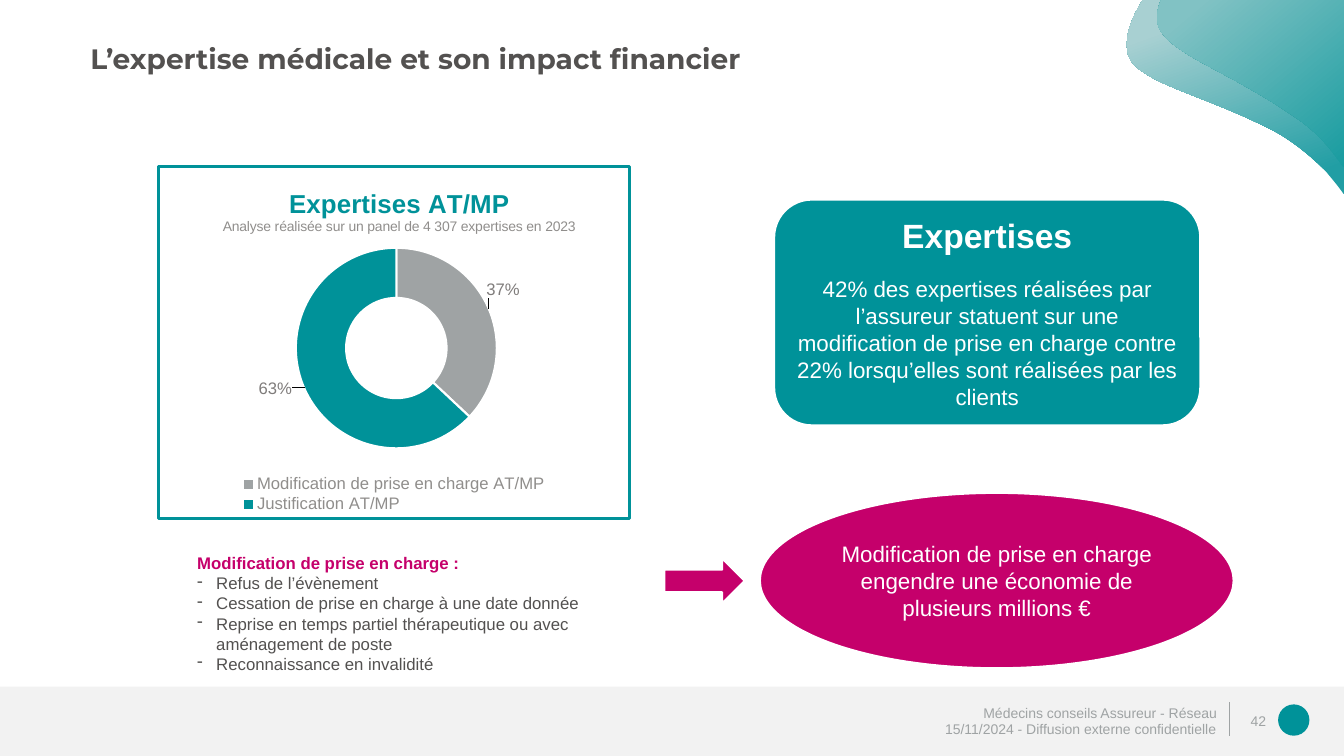
from lxml import etree
from pptx import Presentation
from pptx.chart.data import CategoryChartData
from pptx.dml.color import RGBColor
from pptx.enum.chart import XL_CHART_TYPE, XL_LEGEND_POSITION
from pptx.enum.shapes import MSO_CONNECTOR, MSO_SHAPE
from pptx.enum.text import MSO_ANCHOR, PP_ALIGN
from pptx.oxml import parse_xml
from pptx.oxml.ns import nsdecls, qn
from pptx.util import Cm, Pt

LEFT, CENTER, RIGHT = PP_ALIGN.LEFT, PP_ALIGN.CENTER, PP_ALIGN.RIGHT
TOP, MIDDLE, BOTTOM = MSO_ANCHOR.TOP, MSO_ANCHOR.MIDDLE, MSO_ANCHOR.BOTTOM
TEAL, PINK, GREY, DARK, WHITE = "009299", "C5006B", "9FA3A4", "535150", "FFFFFF"
color = RGBColor.from_string


def write(frame, text, size=12, fill=DARK, bold=False, align=LEFT,
          font="Arial", bullet=False, after=0, spacing=None):
    para = frame.paragraphs[0]
    if para.runs:
        para = frame.add_paragraph()
    if bullet:
        properties = para._p.get_or_add_pPr()
        properties.set("marL", str(Cm(0.48)))
        properties.set("indent", str(-Cm(0.48)))
        etree.SubElement(properties, qn("a:buChar")).set("char", "-")
    para.alignment = align
    para.space_after = Pt(after)
    if spacing:
        para.line_spacing = spacing
    span = para.add_run()
    span.text = text
    span.font.name = font
    span.font.size = Pt(size)
    span.font.bold = bold
    span.font.color.rgb = color(fill)


def place(parent, previous, **numbers):
    for old in parent.findall(qn("c:layout")):
        parent.remove(old)
    layout = etree.Element(qn("c:layout"))
    manual = etree.SubElement(layout, qn("c:manualLayout"))
    if previous is None:
        etree.SubElement(manual, qn("c:layoutTarget")).set("val", "inner")
    if parent.tag != qn("c:dLbl"):
        for mode in ("xMode", "yMode"):
            etree.SubElement(manual, qn(f"c:{mode}")).set("val", "edge")
    for name, number in numbers.items():
        etree.SubElement(manual, qn(f"c:{name}")).set("val", str(number))
    if previous is None:
        parent.insert(0, layout)
    else:
        parent.find(qn(previous)).addnext(layout)


deck = Presentation()
deck.slide_width, deck.slide_height = Cm(33.87), Cm(19.05)
page = deck.slides.add_slide(deck.slide_layouts[6])

waves = [
    ((28.8, 0), [((28.32, 0.76), (28.3, 1.35), (28.58, 1.63)),
                 ((29.11, 2.18), (30.43, 2.44), (32.11, 3.3)),
                 ((32.61, 3.58), (33.05, 3.94), (33.43, 4.34)),
                 ((33.58, 4.52), (33.73, 4.7), (33.87, 4.9))],
     [(0.11, "219EA4"), (0.84, "A8D0D2")], 110),
    ((29.26, 0), [((29.11, 0.36), (29.13, 0.64), (29.29, 0.84)),
                  ((29.74, 1.45), (31.04, 1.85), (32.59, 2.92)),
                  ((33.1, 3.25), (33.48, 3.66), (33.78, 4.11)),
                  ((33.81, 4.17), (33.83, 4.19), (33.87, 4.22))],
     [(0, "189CA0"), (0.88, "81C2C4")], 130),
]
for start, curves, stops, angle in waves:
    outline = page.shapes.build_freeform(Cm(start[0]), Cm(start[1]))
    points, current = [], start
    for first, second, end in curves:
        for step in range(1, 13):
            t = step / 12
            points.append([Cm((1 - t) ** 3 * a + 3 * t * (1 - t) ** 2 * b
                              + 3 * t ** 2 * (1 - t) * c + t ** 3 * d)
                           for a, b, c, d in zip(current, first, second, end)])
        current = end
    outline.add_line_segments(points + [(Cm(33.87), 0)], close=True)
    wave = outline.convert_to_shape()
    wave.shadow.inherit = False
    wave.line.fill.background()
    wave.fill.gradient()
    wave.fill.gradient_angle = angle
    for stop, (position, shade) in zip(wave.fill.gradient_stops, stops):
        stop.position = position
        stop.color.rgb = color(shade)

blocks = [
    (MSO_SHAPE.RECTANGLE, 0, 17.3, 33.87, 1.75, "F2F2F2", False, []),
    (MSO_SHAPE.OVAL, 32.21, 17.75, 0.79, 0.79, TEAL, False, []),
    (MSO_SHAPE.ROUNDED_RECTANGLE, 19.51, 5.03, 10.74, 5.69, TEAL, True, [
        ("Expertises", dict(size=24, bold=True, after=14)),
        ("42% des expertises réalisées par l’assureur statuent sur une "
         "modification de prise en charge contre", dict(size=16)),
        ("22% lorsqu’elles sont réalisées par les clients", dict(size=16))]),
    (MSO_SHAPE.RIGHT_ARROW, 16.74, 14.07, 2.03, 1.14, PINK, True, []),
    (MSO_SHAPE.OVAL, 19.15, 12.42, 11.94, 4.42, PINK, True, [
        ("Modification de prise en charge engendre une économie de "
         "plusieurs millions €", dict(size=16))]),
]
for kind, left, top, width, height, fill, outlined, lines in blocks:
    block = page.shapes.add_shape(kind, Cm(left), Cm(top), Cm(width), Cm(height))
    block.shadow.inherit = False
    block.fill.solid()
    block.fill.fore_color.rgb = color(fill)
    if outlined:
        block.line.color.rgb = color(WHITE)
        block.line.width = Pt(1.5)
    else:
        block.line.fill.background()
    block.text_frame.vertical_anchor = MIDDLE
    for text, style in lines:
        write(block.text_frame, text, fill=WHITE, align=CENTER, **style)

footer = dict(size=10, fill=GREY, align=RIGHT)
item = dict(bullet=True)
texts = [
    (2.03, 0.91, 25.1, 2.41, TOP, 0.13, [
        ("L’expertise médicale et son impact financier",
         dict(size=20, bold=True, font="Montserrat"))]),
    (4.72, 13.8, 10.44, 3.8, TOP, 0.13, [
        ("Modification de prise en charge :", dict(fill=PINK, bold=True)),
        ("Refus de l’évènement", item),
        ("Cessation de prise en charge à une date donnée", item),
        ("Reprise en temps partiel thérapeutique ou avec aménagement de poste", item),
        ("Reconnaissance en invalidité", item)]),
    (22.25, 17.75, 8.66, 0.41, BOTTOM, 0, [
        ("Médecins conseils Assureur - Réseau", dict(footer, spacing=0.7))]),
    (22.23, 18.16, 8.66, 0.41, MIDDLE, 0, [
        ("15/11/2024 - Diffusion externe confidentielle", footer)]),
    (31.09, 17.65, 1.07, 1.02, MIDDLE, 0.13, [("42", footer)]),
]
for left, top, width, height, anchor, inset, lines in texts:
    box = page.shapes.add_textbox(Cm(left), Cm(top), Cm(width), Cm(height))
    frame = box.text_frame
    frame.word_wrap = True
    frame.vertical_anchor = anchor
    frame.margin_top = frame.margin_bottom = Cm(inset)
    for text, style in lines:
        write(frame, text, **style)

divider = page.shapes.add_connector(
    MSO_CONNECTOR.STRAIGHT, Cm(30.99), Cm(17.7), Cm(30.99), Cm(18.54))
divider.line.color.rgb = color(GREY)
divider.line.width = Pt(1)
etree.SubElement(divider._element.spPr, qn("a:effectLst"))

shares = CategoryChartData(number_format="0%")
shares.categories = ["Modification de prise en charge AT/MP", "Justification AT/MP"]
shares.add_series("Series 1", (0.37, 0.63))
chart = page.shapes.add_chart(XL_CHART_TYPE.DOUGHNUT, Cm(3.96), Cm(4.17),
                              Cm(11.94), Cm(8.94), shares).chart
chart.font.name = "Arial"
chart.font.size = Pt(10)
chart.font.color.rgb = color(DARK)
chart.has_title = True
heading = chart.chart_title.text_frame
write(heading, "Expertises AT/MP", size=18.6, fill=TEAL, bold=True, align=CENTER)
write(heading, "Analyse réalisée sur un panel de 4 307 expertises en 2023",
      size=10, fill="908E8C", align=CENTER)
chart.has_legend = True
chart.legend.position = XL_LEGEND_POSITION.BOTTOM
chart.legend.include_in_layout = False
chart.plots[0].vary_by_categories = True
series = chart.plots[0].series[0]
labels = series.data_labels
labels.show_value = True
labels.number_format = "0%"
labels.number_format_is_linked = False
fonts = [(chart.legend.font, "908E8C"), (labels.font, "7F7C7B")]
for index, fill in enumerate((GREY, TEAL)):
    slice_format = series.points[index].format
    slice_format.fill.solid()
    slice_format.fill.fore_color.rgb = color(fill)
    slice_format.line.color.rgb = color(WHITE)
    slice_format.line.width = Pt(1.5)
    fonts.append((series.points[index].data_label.font, "7F7C7B"))
for font, fill in fonts:
    font.name = "Arial"
    font.size = Pt(12)
    font.color.rgb = color(fill)

root = chart.element
place(next(root.iter(qn("c:title"))), "c:tx", x=0.13, y=0.05)
place(next(root.iter(qn("c:plotArea"))), None, x=0.29, y=0.23, w=0.43, h=0.57)
place(next(root.iter(qn("c:legend"))), "c:legendPos", x=0.17, y=0.87, w=0.66, h=0.12)
for label, (x, y) in zip(root.iter(qn("c:dLbl")), ((0.08, -0.08), (-0.11, 0.03))):
    place(label, "c:idx", x=x, y=y)
next(root.iter(qn("c:holeSize"))).set("val", "75")
root.find(qn("c:chart")).addnext(parse_xml(
    f'<c:spPr {nsdecls("c", "a")}><a:noFill/><a:ln w="{Pt(2)}"><a:solidFill>'
    f'<a:srgbClr val="{TEAL}"/></a:solidFill></a:ln></c:spPr>'))

deck.save("out.pptx")
